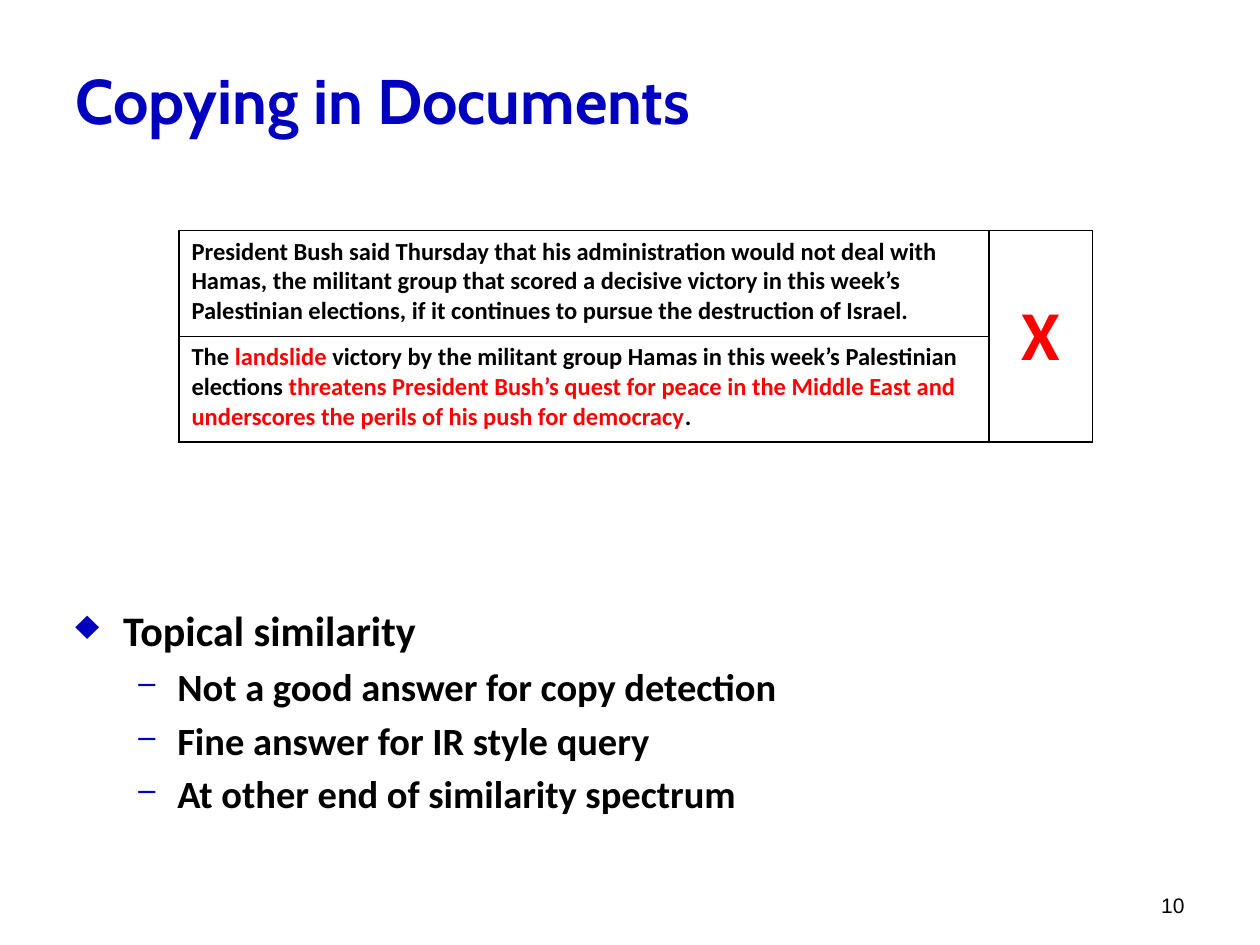
from dataclasses import dataclass

import pptx
import pptx.dml.color
import pptx.enum.text
import pptx.oxml
import pptx.oxml.ns
import pptx.util
from pptx.util import Inches

ALIGN = pptx.enum.text.PP_ALIGN
ANCHOR = pptx.enum.text.MSO_ANCHOR


@dataclass(frozen=True)
class Theme:
    """Colours, fonts and type sizes of the slide."""
    accent: str = "0000BE"
    ink: str = "000000"
    alert: str = "FF0000"
    heading_font: str = "Cabin"
    body_font: str = "Calibri"
    number_font: str = "Arial"
    title_size: int = 36
    verdict_size: int = 40
    passage_size: int = 14
    point_size: int = 24
    subpoint_size: int = 22
    number_size: int = 12


THEME = Theme()


def add_run(paragraph, text, size, color=THEME.ink, name=THEME.body_font, bold=True):
    """Append a formatted run to a paragraph."""
    run = paragraph.add_run()
    run.text = text
    formats = {"size": pptx.util.Pt(size), "name": name, "bold": bold}
    for attribute, value in formats.items():
        setattr(run.font, attribute, value)
    run.font.color.rgb = pptx.dml.color.RGBColor.from_string(color)


def add_frame(slide, box, anchor):
    """Add a wrapping text box and return its text frame."""
    frame = slide.shapes.add_textbox(*map(Inches, box)).text_frame
    for attribute, value in {"word_wrap": True, "vertical_anchor": anchor}.items():
        setattr(frame, attribute, value)
    return frame


def add_title(slide, box, text):
    """Place the slide title in its box."""
    heading = add_frame(slide, box, ANCHOR.MIDDLE).paragraphs[0]
    add_run(heading, text, THEME.title_size, THEME.accent, THEME.heading_font)


def add_page_number(slide, box, number):
    """Place the page number at the lower right of its box."""
    page = add_frame(slide, box, ANCHOR.BOTTOM).paragraphs[0]
    page.alignment = ALIGN.RIGHT
    add_run(page, number, THEME.number_size, name=THEME.number_font, bold=False)


def outline_cell(cell):
    """Clear the cell fill and rule all four sides."""
    cell.fill.background()
    properties = cell._tc.get_or_add_tcPr()
    for position, side in enumerate(("lnL", "lnR", "lnT", "lnB")):
        properties.insert(position, pptx.oxml.parse_xml(
            f'<a:{side} {pptx.oxml.ns.nsdecls("a")} w="12700"><a:solidFill>'
            f'<a:srgbClr val="{THEME.ink}"/></a:solidFill></a:{side}>'))


def add_comparison(slide, box, passages, verdict):
    """Place the compared passages beside one merged verdict cell."""
    left, top, width, height = box
    verdict_width = 0.82
    comparison = slide.shapes.add_table(
        len(passages), 2, *map(Inches, (left, top, width, height))).table
    for attribute in ("first_row", "horz_banding"):
        setattr(comparison, attribute, False)
    for column, column_width in zip(comparison.columns, (width - verdict_width, verdict_width)):
        column.width = Inches(column_width)
    for cell in comparison.iter_cells():
        outline_cell(cell)
    for row, passage in enumerate(passages):
        wording = comparison.cell(row, 0).text_frame.paragraphs[0]
        for text, color in passage:
            add_run(wording, text, THEME.passage_size, color)
    verdict_cell = comparison.cell(0, 1)
    verdict_cell.merge(comparison.cell(len(passages) - 1, 1))
    verdict_cell.vertical_anchor = ANCHOR.MIDDLE
    mark = verdict_cell.text_frame.paragraphs[0]
    mark.alignment = ALIGN.CENTER
    add_run(mark, verdict, THEME.verdict_size, THEME.alert)


def set_bullet(paragraph, symbol, margin, hanging, percent):
    """Give a paragraph a coloured bullet with a hanging indent."""
    properties = paragraph._p.get_or_add_pPr()
    for attribute, value in {"marL": margin, "indent": -hanging}.items():
        properties.set(attribute, str(Inches(value)))
    for tag in (f'buClr {{}}><a:srgbClr val="{THEME.accent}"/></a:buClr>',
                f'buSzPct {{}} val="{percent * 1000}"/>',
                f'buChar {{}} char="{symbol}"/>'):
        properties.append(pptx.oxml.parse_xml("<a:" + tag.format(pptx.oxml.ns.nsdecls("a"))))


def add_points(slide, box, points):
    """Place the two-level bullet list in its box."""
    styles = (
        (THEME.point_size, 0, ("♦", 0.38, 0.38, 100)),
        (THEME.subpoint_size, 0.2, ("–", 0.81, 0.31, 80)),
    )
    frame = add_frame(slide, box, ANCHOR.TOP)
    for index, (level, text) in enumerate(points):
        point = frame.add_paragraph() if index else frame.paragraphs[0]
        size, gap, bullet = styles[level]
        formats = {"level": level, "space_before": pptx.util.Pt(size * gap)}
        for attribute, value in formats.items():
            setattr(point, attribute, value)
        set_bullet(point, *bullet)
        add_run(point, text, size)


def main():
    """Build and save the slide."""
    deck = pptx.Presentation()
    deck.slide_width, deck.slide_height = Inches(10), Inches(7.5)
    slide = deck.slides.add_slide(deck.slide_layouts[6])
    add_title(slide, (0.5, 0.33, 9.5, 0.92), "Copying in Documents")
    add_page_number(slide, (7.17, 6.83, 2.33, 0.5), "10")
    add_comparison(slide, (1.42, 1.83, 7.25, 1.68), (
        (("President Bush said Thursday that his administration would not deal with "
          "Hamas, the militant group that scored a decisive victory in this week’s "
          "Palestinian elections, if it continues to pursue the destruction of Israel.",
          THEME.ink),),
        (("The ", THEME.ink),
         ("landslide", THEME.alert),
         (" victory by the militant group Hamas in this week’s Palestinian elections ",
          THEME.ink),
         ("threatens President Bush’s quest for peace in the Middle East and "
          "underscores the perils of his push for democracy", THEME.alert),
         (".", THEME.ink)),
    ), "X")
    add_points(slide, (0.5, 4.75, 9.5, 2.33), (
        (0, "Topical similarity"),
        (1, "Not a good answer for copy detection"),
        (1, "Fine answer for IR style query"),
        (1, "At other end of similarity spectrum"),
    ))
    deck.save("out.pptx")


if __name__ == "__main__":
    main()
